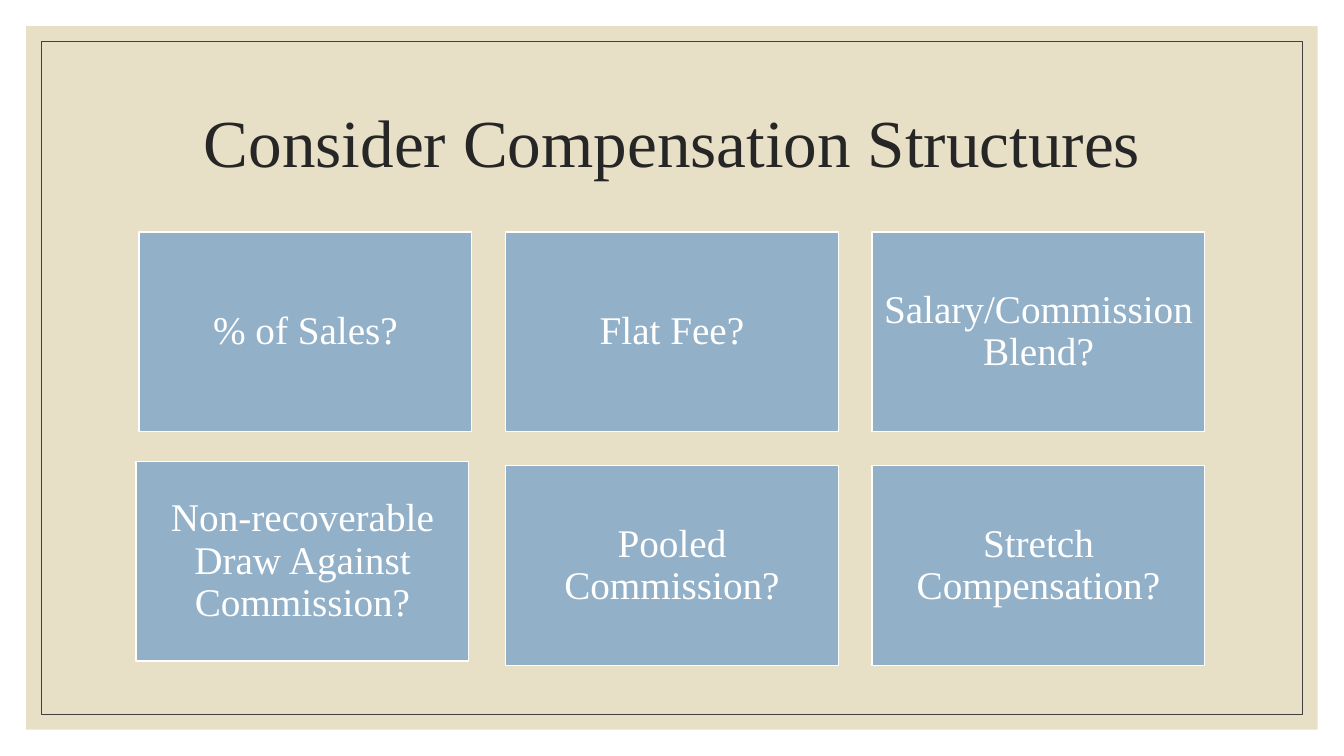
from pptx import Presentation
from pptx.dml.color import RGBColor
from pptx.enum.shapes import MSO_SHAPE as Preset
from pptx.enum.text import MSO_ANCHOR as Anchor, PP_ALIGN as Align
from pptx.util import Inches, Pt

WIDTH, HEIGHT = 13.33, 7.5
OPTIONS = [
    ["% of Sales?", "Flat Fee?", "Salary/Commission Blend?"],
    ["Non-recoverable Draw Against Commission?", "Pooled Commission?",
     "Stretch Compensation?"],
]
NUDGES = {(1, 0): (-0.03, -0.04)}


def color(value):
    """Turn a hex string into a colour."""
    return RGBColor.from_string(value)


def apply(target, values):
    """Set attributes from a dict of format values."""
    for name, value in values.items():
        setattr(target, name, value)


def add_panel(page, box, fill=None, line=None, weight=1):
    """Draw a plain rectangle with an optional fill and outline."""
    panel = page.shapes.add_shape(Preset.RECTANGLE, *map(Inches, box))
    panel.shadow.inherit = False
    if fill:
        panel.fill.solid()
        panel.fill.fore_color.rgb = color(fill)
    else:
        panel.fill.background()
    if line:
        panel.line.color.rgb = color(line)
        panel.line.width = Pt(weight)
    else:
        panel.line.fill.background()
    return panel


def write(shape, text, size, ink, inset):
    """Write one centred paragraph into a shape."""
    frame = shape.text_frame
    apply(frame, {"word_wrap": True, "vertical_anchor": Anchor.MIDDLE,
                  "margin_left": Inches(inset), "margin_right": Inches(inset)})
    para = frame.paragraphs[0]
    apply(para, {"alignment": Align.CENTER, "line_spacing": 0.9})
    span = para.add_run()
    span.text = text
    apply(span.font, {"name": "Times New Roman", "size": Pt(size)})
    span.font.color.rgb = color(ink)


def add_backdrop(page, box):
    """Draw the sand backdrop and the thin frame inside it."""
    left, top, width, height = box
    inset = 0.15
    add_panel(page, box, fill="E7E0C7")
    add_panel(page, (left + inset, top + inset, width - 2 * inset,
                     height - 2 * inset), line="404040", weight=0.5)


def add_title(page, box, text):
    """Place the slide title."""
    write(page.shapes.add_textbox(*map(Inches, box)), text, 48, "262626", 0.1)


def add_options(page, box, rows):
    """Lay the option cards out on a grid with equal gaps."""
    left, top, width, height = box
    card_width, card_height = 3.3, 1.98
    step_x = (width - card_width) / (len(rows[0]) - 1)
    step_y = (height - card_height) / (len(rows) - 1)
    for row, labels in enumerate(rows):
        for column, label in enumerate(labels):
            shift_x, shift_y = NUDGES.get((row, column), (0, 0))
            card = add_panel(page, (left + column * step_x + shift_x,
                                    top + row * step_y + shift_y,
                                    card_width, card_height),
                             fill="92B0C8", line="FFFFFF")
            write(card, label, 28, "FFFFFF", 0.11)


def main():
    """Build the slide and save it."""
    deck = Presentation()
    apply(deck, {"slide_width": Inches(WIDTH), "slide_height": Inches(HEIGHT)})
    page = deck.slides.add_slide(deck.slide_layouts[6])
    margin = 0.26
    add_backdrop(page, (margin, margin, WIDTH - 2 * margin, HEIGHT - 2 * margin))
    add_title(page, (1.17, 0.7, 11, 1.5), "Consider Compensation Structures")
    add_options(page, (1.38, 2.3, 10.57, 4.3), OPTIONS)
    deck.save("out.pptx")


if __name__ == "__main__":
    main()
